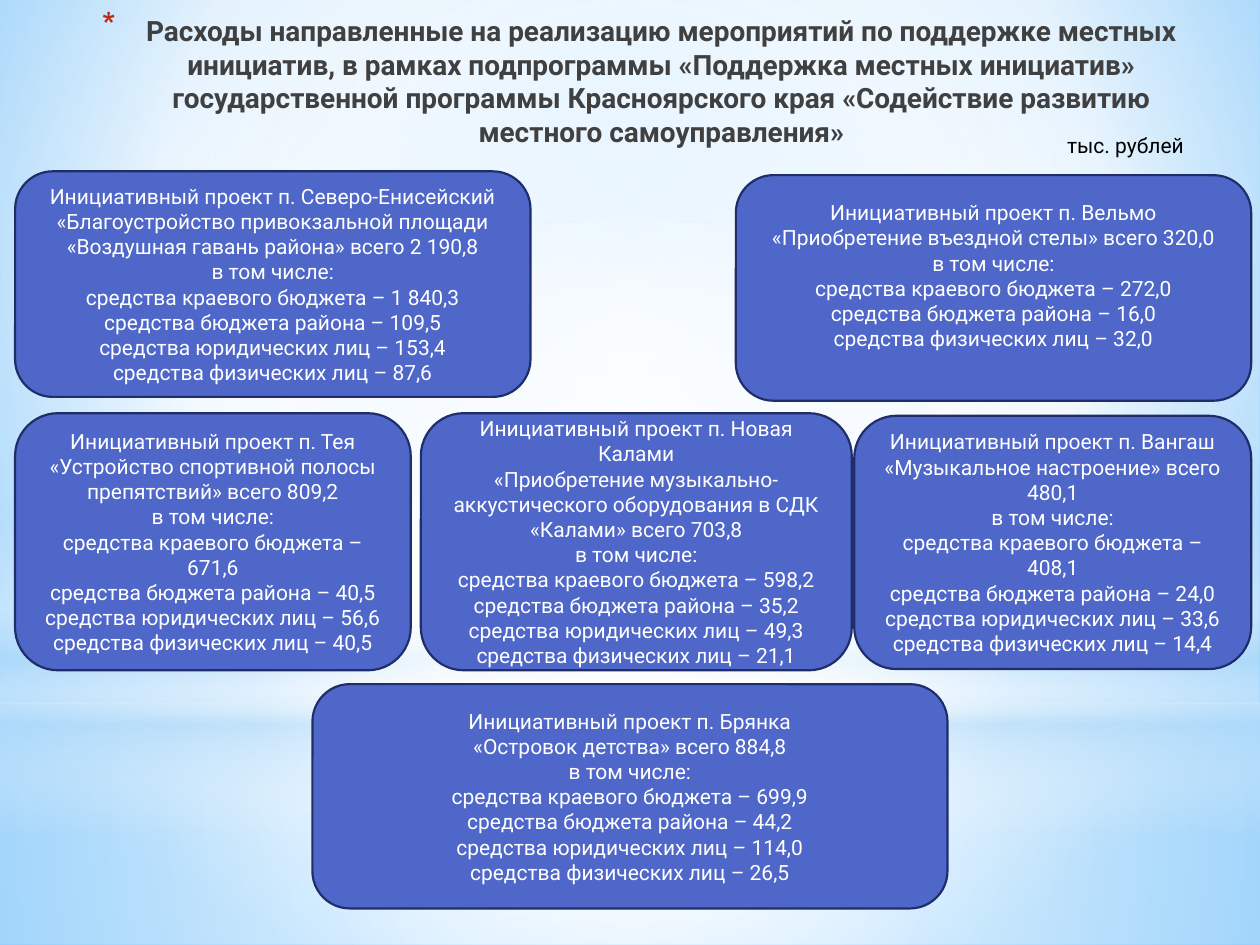
from dataclasses import dataclass

import lxml.etree
import pptx
import pptx.dml.color
import pptx.enum.shapes
import pptx.enum.text
import pptx.oxml
import pptx.oxml.ns
import pptx.util
from pptx.util import Inches

SHAPES = pptx.enum.shapes.MSO_SHAPE
ALIGN = pptx.enum.text.PP_ALIGN
ANCHOR = pptx.enum.text.MSO_ANCHOR
qn = pptx.oxml.ns.qn


@dataclass(frozen=True)
class Theme:
    font: str = "Roboto"
    title_size: int = 16
    body_size: int = 12
    border_width: float = 1.25
    title: str = "404040"
    bullet: str = "C3260C"
    unit: str = "000000"
    card: str = "4E67C8"
    card_border: str = "1F2E69"
    card_text: str = "FFFFFF"
    white: str = "FFFFFF"
    haze: str = "B4DCFA"
    sky: str = "9ED5FF"
    deep_sky: str = "5BB9FF"


THEME = Theme()
CENTRE = (50, 50, 50, 50)

HEADING = (
    "Расходы направленные на реализацию мероприятий по поддержке местных инициатив, "
    "в рамках подпрограммы «Поддержка местных инициатив» государственной программы "
    "Красноярского края «Содействие развитию местного самоуправления»"
)

SOURCES = ("краевого бюджета", "бюджета района", "юридических лиц", "физических лиц")

PROJECTS = [
    ((0.12, 1.36, 4.09, 1.79), "Северо-Енисейский",
     "«Благоустройство привокзальной площади «Воздушная гавань района»",
     "2 190,8", ("1 840,3", "109,5", "153,4", "87,6")),
    ((5.84, 1.39, 4.09, 1.79), "Вельмо", "«Приобретение въездной стелы»",
     "320,0", ("272,0", "16,0", None, "32,0")),
    ((6.78, 3.3, 3.15, 2.01), "Вангаш", "«Музыкальное настроение»",
     "480,1", ("408,1", "24,0", "33,6", "14,4")),
    ((0.12, 3.28, 3.14, 2.04), "Тея", "«Устройство спортивной полосы препятствий»",
     "809,2", ("671,6", "40,5", "56,6", "40,5")),
    ((3.34, 3.28, 3.42, 2.04), "Новая Калами",
     "«Приобретение музыкально-аккустического оборудования в СДК «Калами»",
     "703,8", ("598,2", "35,2", "49,3", "21,1")),
    ((2.48, 5.43, 5.04, 1.78), "Брянка", "«Островок детства»",
     "884,8", ("699,9", "44,2", "114,0", "26,5")),
]


def rgb(value):
    return pptx.dml.color.RGBColor.from_string(value)


def inches(box):
    return [Inches(length) for length in box]


def format_text(frame, size, color, align, bold=False):
    for paragraph in frame.paragraphs:
        paragraph.alignment = align
        for run in paragraph.runs:
            run.font.name = THEME.font
            run.font.size = pptx.util.Pt(size)
            run.font.bold = bold
            run.font.color.rgb = rgb(color)


def apply_gradient(fill, owner, stops, focus=None):
    fill.solid()
    solid = next(owner.iter(qn("a:solidFill")))
    gradient = pptx.oxml.ns.nsdecls("a")
    gradient = pptx.oxml.parse_xml(f'<a:gradFill {gradient} rotWithShape="1"><a:gsLst/></a:gradFill>')
    for position, color, opacity in stops:
        stop = lxml.etree.SubElement(gradient[0], qn("a:gs"), pos=str(position * 1000))
        tint = lxml.etree.SubElement(stop, qn("a:srgbClr"), val=color)
        if opacity < 100:
            lxml.etree.SubElement(tint, qn("a:alpha"), val=str(opacity * 1000))
    if focus:
        spread = lxml.etree.SubElement(gradient, qn("a:path"), path="circle")
        edges = {side: str(share * 1000) for side, share in zip("ltrb", focus)}
        lxml.etree.SubElement(spread, qn("a:fillToRect"), **edges)
    else:
        lxml.etree.SubElement(gradient, qn("a:lin"), ang="5400000", scaled="0")
    solid.getparent().replace(solid, gradient)


def add_backdrop(slide, box):
    left, top, width, height = box
    white, haze = THEME.white, THEME.haze
    apply_gradient(slide.background.fill, slide.element,
                   [(0, THEME.sky, 100), (60, white, 100), (100, THEME.deep_sky, 100)],
                   (20, 10, 20, 60))
    layers = [
        (SHAPES.RECTANGLE, 5.58, 1.92, [(0, white, 91), (37, white, 76), (100, haze, 79)], CENTRE),
        (SHAPES.RECTANGLE, 0, 5.58, [(0, white, 89), (48, white, 62), (100, haze, 79)], CENTRE),
        (SHAPES.RECTANGLE, 4.12, 2.5,
         [(0, white, 0), (29, white, 30), (45, haze, 40), (55, white, 26),
          (65, haze, 60), (100, white, 0)], None),
        (SHAPES.OVAL, 1.75, 5.58, [(0, white, 100), (56, white, 0)], CENTRE),
    ]
    for outline, offset, depth, stops, focus in layers:
        layer = slide.shapes.add_shape(outline, *inches((left, top + offset, width, depth)))
        layer.shadow.inherit = False
        layer.line.fill.background()
        apply_gradient(layer.fill, layer.element.spPr, stops, focus)
        slide.shapes.title.element.addprevious(layer.element)


def add_heading(slide, box):
    heading = slide.shapes.title
    heading.left, heading.top, heading.width, heading.height = inches(box)
    frame = heading.text_frame
    frame.text = HEADING
    frame.auto_size = pptx.enum.text.MSO_AUTO_SIZE.NONE
    frame.vertical_anchor = ANCHOR.MIDDLE
    format_text(frame, THEME.title_size, THEME.title, ALIGN.CENTER, bold=True)
    properties = frame.paragraphs[0].runs[0].font
    properties = next(heading.element.iter(qn("a:pPr")))
    properties.set("marL", str(Inches(0.35)))
    properties.set("indent", str(Inches(-0.35)))
    bullet_color = lxml.etree.SubElement(properties, qn("a:buClr"))
    lxml.etree.SubElement(bullet_color, qn("a:srgbClr"), val=THEME.bullet)
    lxml.etree.SubElement(properties, qn("a:buSzPct"), val="128000")
    lxml.etree.SubElement(properties, qn("a:buChar"), char="*")


def add_unit(slide, box):
    frame = slide.shapes.add_textbox(*inches(box)).text_frame
    frame.word_wrap = True
    frame.margin_left = Inches(0.16)
    frame.margin_top = Inches(0.13)
    frame.text = "тыс. рублей"
    format_text(frame, THEME.body_size, THEME.unit, ALIGN.LEFT)


def add_project(slide, box, village, project, total, amounts):
    card = slide.shapes.add_shape(SHAPES.ROUNDED_RECTANGLE, *inches(box))
    card.shadow.inherit = False
    card.fill.solid()
    card.fill.fore_color.rgb = rgb(THEME.card)
    card.line.color.rgb = rgb(THEME.card_border)
    card.line.width = pptx.util.Pt(THEME.border_width)
    frame = card.text_frame
    frame.word_wrap = True
    frame.vertical_anchor = ANCHOR.MIDDLE
    if None in amounts:
        frame.margin_bottom = Inches(0.25)
    lines = [f"Инициативный проект п. {village}", f"{project} всего {total}", "в том числе:"]
    lines += [f"средства {source} – {amount}" for source, amount in zip(SOURCES, amounts) if amount]
    frame.text = "\n".join(lines)
    format_text(frame, THEME.body_size, THEME.card_text, ALIGN.CENTER)


def main():
    deck = pptx.Presentation()
    deck.slide_width, deck.slide_height = Inches(10), Inches(7.5)
    slide = deck.slides.add_slide(deck.slide_layouts[5])
    add_backdrop(slide, (0, 0, 10, 7.5))
    add_heading(slide, (0.43, 0.05, 9.29, 1.18))
    for project in PROJECTS:
        add_project(slide, *project)
    add_unit(slide, (8.31, 0.92, 1.46, 0.4))
    deck.save("out.pptx")


if __name__ == "__main__":
    main()
